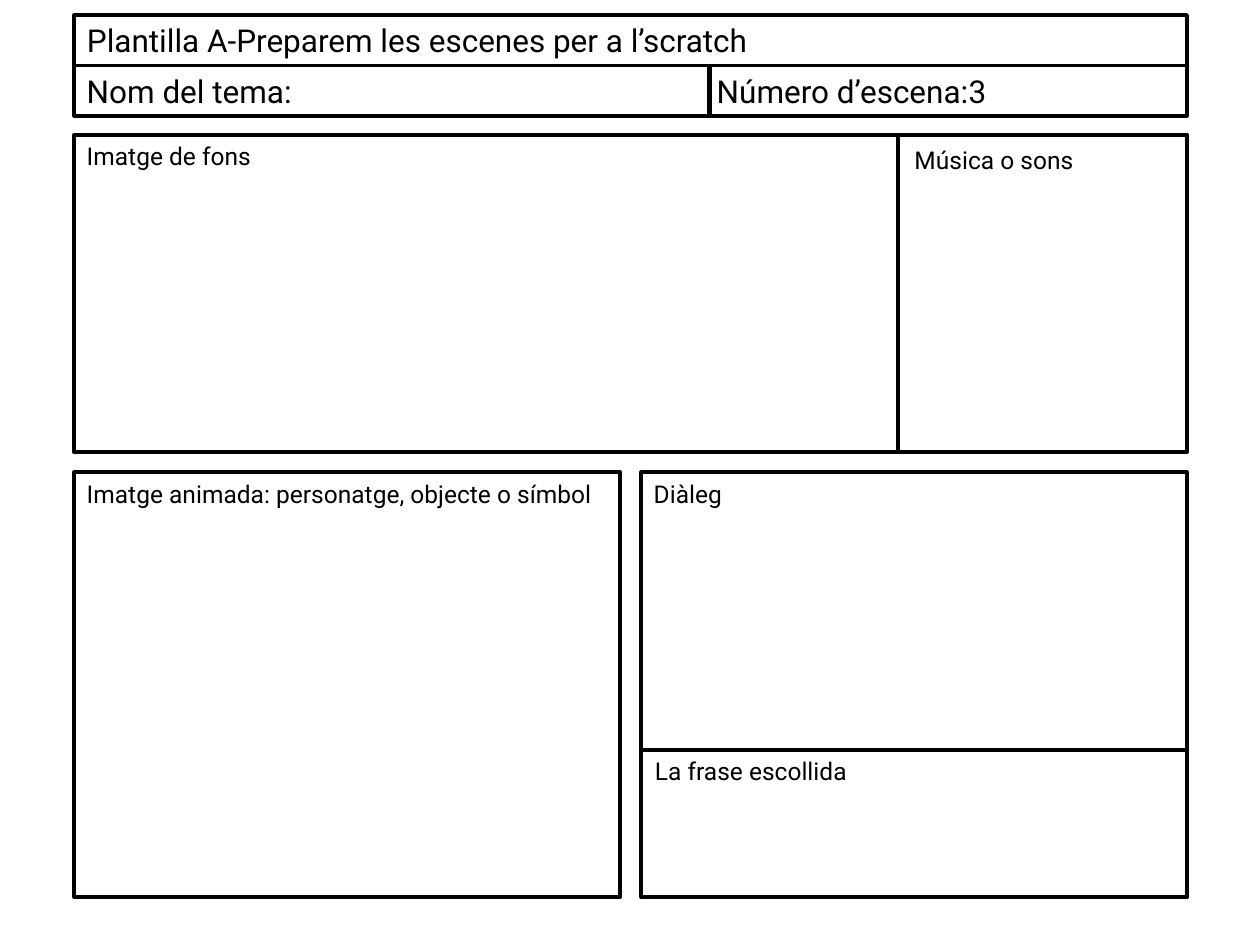
from lxml.etree import SubElement
from pptx import Presentation
from pptx.dml.color import RGBColor
from pptx.enum.shapes import MSO_CONNECTOR as Connector, MSO_SHAPE as Shape
from pptx.enum.text import MSO_ANCHOR as Anchor, PP_ALIGN as Align
from pptx.oxml.ns import qn
from pptx.util import Inches, Pt

COLORS = {"ink": "000000"}
FONT = "Roboto"
HEADING, LABEL = 18, 14  # text sizes
LINE = 2.25

# Page grid, in inches
LEFT, WIDTH = 0.59, 8.83
RIGHT = LEFT + WIDTH
GAP = 0.16
HALF = (WIDTH - GAP - 0.01) / 2
RIGHT_HALF = RIGHT - HALF
ROW = 0.4
TITLE_TOP = 0.12
TOPIC_TOP = TITLE_TOP + ROW
SCENE_TOP, SCENE_HEIGHT = 1.07, 2.52
LOWER_TOP, LOWER_HEIGHT = 3.75, 3.37
SCENE_SPLIT, PHRASE_TOP, NUMBER_SPLIT = 7.13, 5.95, 5.63

TITLE = "Plantilla A-Preparem les escenes per a l’scratch"
TOPIC = "Nom del tema:\tNúmero d’escena:\t3"
TOPIC_TABS = (5, 7)

# Text, left, top, width, height, text size
FRAMES = [
    (TOPIC, LEFT, TOPIC_TOP, WIDTH, ROW, HEADING),
    ("Imatge de fons", LEFT, SCENE_TOP, WIDTH, SCENE_HEIGHT, LABEL),
    ("Imatge animada: personatge, objecte o símbol",
     LEFT, LOWER_TOP, HALF, LOWER_HEIGHT, LABEL),
    ("Diàleg", RIGHT_HALF, LOWER_TOP, HALF, LOWER_HEIGHT, LABEL),
]
# Text, left, top, width
CAPTIONS = [
    ("Música o sons", 7.16, 1.1, 1.73),
    ("La frase escollida", 5.1, PHRASE_TOP, 2.36),
]
# Start x, start y, end x, end y, line width
DIVIDERS = [
    (NUMBER_SPLIT, TOPIC_TOP, NUMBER_SPLIT, TOPIC_TOP + ROW, 3),
    (SCENE_SPLIT, SCENE_TOP, SCENE_SPLIT, SCENE_TOP + SCENE_HEIGHT, LINE),
    (RIGHT_HALF, PHRASE_TOP, RIGHT, PHRASE_TOP, LINE),
]


def color(name):
    return RGBColor.from_string(COLORS[name])


def write(shape, text, size):
    frame = shape.text_frame
    frame.word_wrap = True
    frame.vertical_anchor = Anchor.TOP
    frame.margin_left = frame.margin_right = Inches(0.1)
    frame.margin_top = frame.margin_bottom = Inches(0.05)
    paragraph = frame.paragraphs[0]
    paragraph.text = text
    paragraph.alignment = Align.LEFT
    paragraph.font.name = FONT
    paragraph.font.size = Pt(size)
    paragraph.font.color.rgb = color("ink")
    return paragraph


def outline(shape, width=LINE):
    shape.line.color.rgb = color("ink")
    shape.line.width = Pt(width)


def set_tabs(paragraph, stops):
    properties = paragraph._p.get_or_add_pPr()
    tabs = SubElement(properties, qn("a:tabLst"))
    for stop in stops:
        SubElement(tabs, qn("a:tab"), pos=str(Inches(stop)), algn="l")


presentation = Presentation()
presentation.slide_width, presentation.slide_height = Inches(10), Inches(7.5)
slide = presentation.slides.add_slide(presentation.slide_layouts[5])

# Title bar
title = slide.shapes.title
title.left, title.top = Inches(LEFT), Inches(TITLE_TOP)
title.width, title.height = Inches(WIDTH), Inches(ROW)
outline(title)
write(title, TITLE, HEADING)

# Outlined frames
for text, left, top, width, height, size in FRAMES:
    frame_box = slide.shapes.add_shape(
        Shape.RECTANGLE, Inches(left), Inches(top), Inches(width), Inches(height))
    frame_box.shadow.inherit = False
    frame_box.fill.background()
    outline(frame_box)
    label = write(frame_box, text, size)
    if text == TOPIC:
        set_tabs(label, TOPIC_TABS)

# Dividing lines
for start_x, start_y, end_x, end_y, width in DIVIDERS:
    divider = slide.shapes.add_connector(
        Connector.STRAIGHT, Inches(start_x), Inches(start_y), Inches(end_x), Inches(end_y))
    outline(divider, width)
    SubElement(divider._element.spPr, qn("a:effectLst"))

# Captions of the split-off areas
for text, left, top, width in CAPTIONS:
    caption = slide.shapes.add_textbox(
        Inches(left), Inches(top), Inches(width), Inches(0.34))
    write(caption, text, LABEL)

presentation.save("out.pptx")
